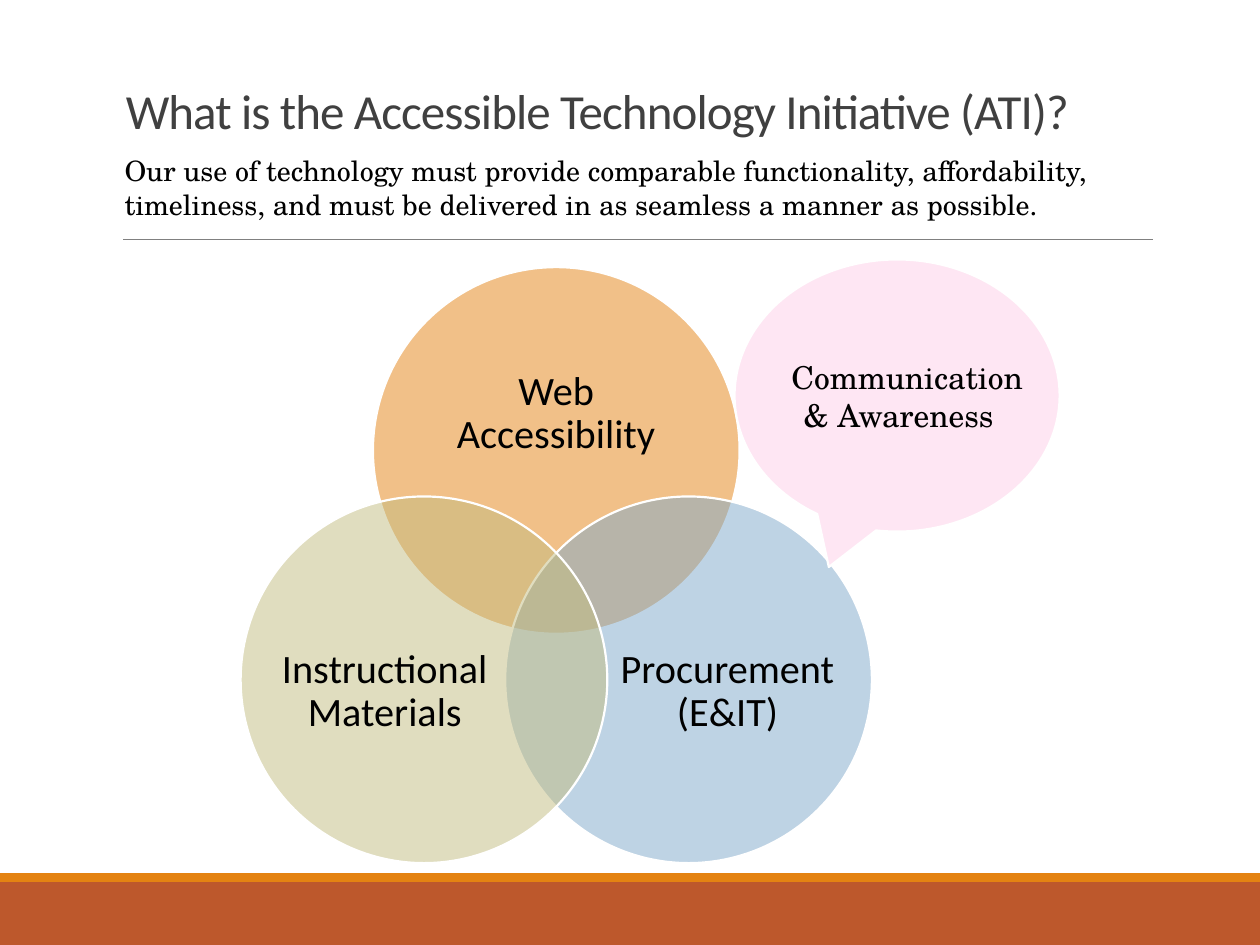
"""Build the Accessible Technology Initiative slide with its three-circle diagram."""
from lxml import etree
from pptx import Presentation
from pptx.dml.color import RGBColor
from pptx.enum.shapes import MSO_CONNECTOR, MSO_SHAPE
from pptx.enum.text import MSO_ANCHOR, PP_ALIGN
from pptx.oxml.ns import qn
from pptx.util import Inches, Pt

RECT, OVAL = MSO_SHAPE.RECTANGLE, MSO_SHAPE.OVAL
CALLOUT = MSO_SHAPE.OVAL_CALLOUT
STRAIGHT = MSO_CONNECTOR.STRAIGHT
TOP, MIDDLE, BOTTOM = MSO_ANCHOR.TOP, MSO_ANCHOR.MIDDLE, MSO_ANCHOR.BOTTOM
LEFT, CENTER = PP_ALIGN.LEFT, PP_ALIGN.CENTER
SANS, SERIF = "Calibri", "TeX Gyre Schola"
COLORS = {
    "rust": "BD582C", "orange": "E48312", "blue": "7EA9CA", "khaki": "C2BC80",
    "pink": "FEE6F3", "white": "FFFFFF", "rule": "808080",
    "title": "404040", "text": "000000",
}
DIAMETER = 2.91


def add_filled(kind, box, color, outline=None):
    sp = s.shapes.add_shape(kind, *map(Inches, box))
    sp.shadow.inherit = False
    sp.fill.solid()
    sp.fill.fore_color.rgb = RGBColor.from_string(COLORS[color])
    if outline:
        sp.line.color.rgb = RGBColor.from_string(COLORS[outline])
        sp.line.width = Pt(1.25)
    else:
        sp.line.fill.background()
    return sp


def add_text(text, box, size, font, color="text", align=LEFT, anchor=TOP,
             spacing=1.0, inset=None):
    tf = s.shapes.add_textbox(*map(Inches, box)).text_frame
    tf.word_wrap = True
    tf.vertical_anchor = anchor
    if inset is not None:
        tf.margin_left = tf.margin_right = Inches(inset)
        tf.margin_top = tf.margin_bottom = Inches(inset)
    tf.text = text
    p = tf.paragraphs[0]
    p.alignment = align
    p.line_spacing = spacing
    r = p.runs[0]
    r.font.size = Pt(size)
    r.font.name = font
    r.font.color.rgb = RGBColor.from_string(COLORS[color])
    return r


prs = Presentation()
prs.slide_width, prs.slide_height = Inches(10), Inches(7.5)
s = prs.slides.add_slide(prs.slide_layouts[6])

add_filled(RECT, (0, 7, 10, 0.5), "rust")
add_filled(RECT, (0, 6.93, 10, 0.07), "orange")

rule = s.shapes.add_connector(
    STRAIGHT, Inches(0.98), Inches(1.9), Inches(9.15), Inches(1.9))
rule.line.color.rgb = RGBColor.from_string(COLORS["rule"])
rule.line.width = Pt(0.5)
etree.SubElement(rule._element.spPr, qn("a:effectLst"))

r = add_text("What is the Accessible Technology Initiative (ATI)?",
             (0.9, 0.31, 8.25, 0.85), 28, SANS, "title", anchor=BOTTOM, spacing=0.85)
r._r.get_or_add_rPr().set("spc", "-50")

circles = [
    ("Web Accessibility", 2.96, 2.12, "orange", (3.35, 2.63, 2.13, 1.31)),
    ("Procurement (E&IT)", 4.01, 3.94, "blue", (4.9, 4.69, 1.75, 1.6)),
    ("Instructional Materials", 1.91, 3.94, "khaki", (2.18, 4.69, 1.75, 1.6)),
]
for label, x, y, color, label_box in circles:
    sp = add_filled(OVAL, (x, y, DIAMETER, DIAMETER), color, "white")
    clr = sp._element.spPr.find(qn("a:solidFill")).find(qn("a:srgbClr"))
    etree.SubElement(clr, qn("a:alpha"), val="50000")
    add_text(label, label_box, 23, SANS, align=CENTER, anchor=MIDDLE,
             spacing=0.9, inset=0)

bubble = add_filled(CALLOUT, (5.83, 2.06, 2.58, 2.16), "pink", "white")
bubble.adjustments[0] = -0.21
bubble.adjustments[1] = 0.63
add_text(" Communication & Awareness ", (6.08, 2.79, 2.17, 0.71), 18, SERIF,
         align=CENTER)

add_text("Our use of technology must provide comparable functionality, "
         "affordability, timeliness, and must be delivered in as seamless "
         "a manner as possible.", (0.89, 1.17, 8.26, 0.94), 16, SERIF)

prs.save("out.pptx")
